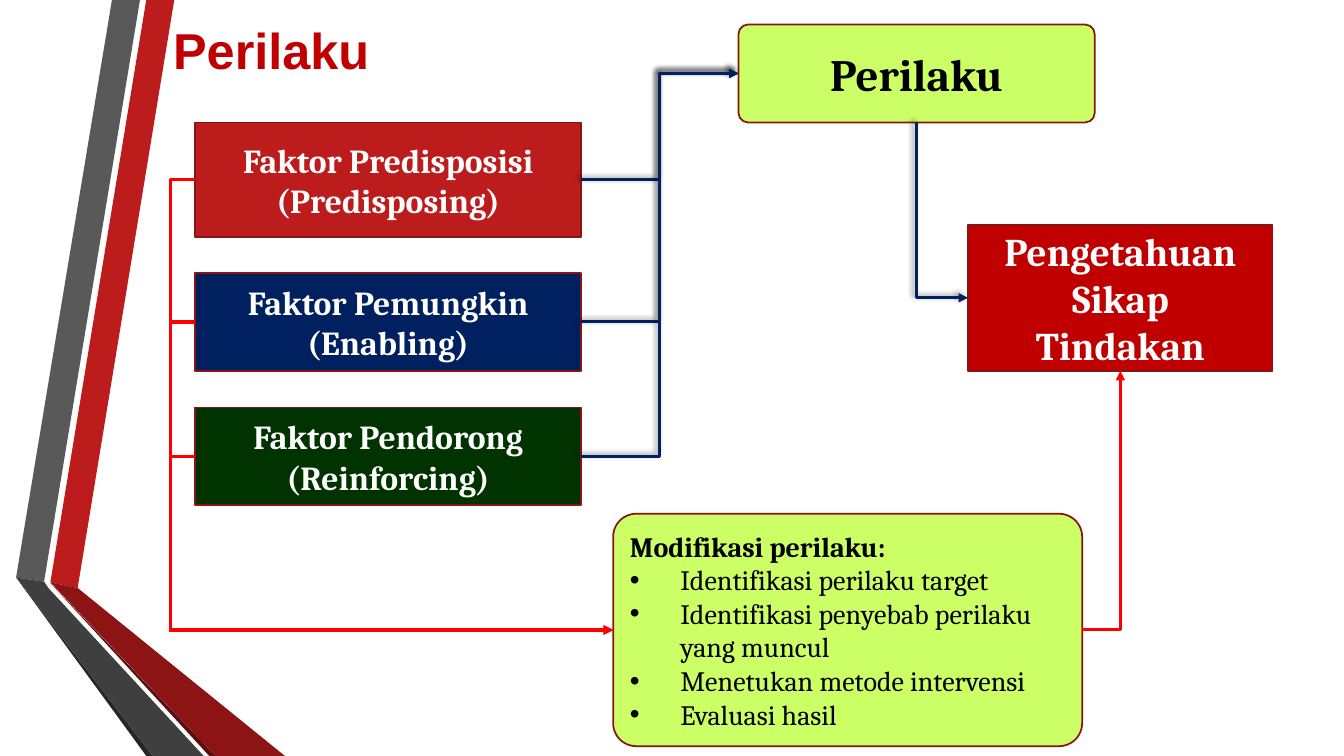
from lxml.etree import SubElement
from pptx import Presentation
from pptx.dml.color import RGBColor
from pptx.enum.shapes import MSO_CONNECTOR, MSO_SHAPE
from pptx.enum.text import MSO_ANCHOR, MSO_AUTO_SIZE, PP_ALIGN
from pptx.oxml.ns import qn
from pptx.util import Pt

RED, NAVY, LIME, EDGE = "C00000", "002060", "CCFF66", "891414"
TOP, LEFT, BOTTOM, RIGHT = range(4)
ROUNDING = 0.099


def rgb(value):
    return RGBColor.from_string(value)


def sub(parent, tag, **attrs):
    return SubElement(parent, qn(tag), {k: str(v) for k, v in attrs.items()})


def paint(sp, fill, line=None):
    sp.fill.solid()
    sp.fill.fore_color.rgb = rgb(fill)
    if line:
        sp.line.color.rgb = rgb(line)
        sp.line.width = Pt(1.25)
    else:
        sp.line.fill.background()


def place(sp, x, y, w, h):
    for name, value in dict(left=x, top=y, width=w, height=h).items():
        setattr(sp, name, Pt(value))


def style(p, color, size, bold=True, name="Cambria"):
    for key, value in dict(size=Pt(size), bold=bold, name=name).items():
        setattr(p.font, key, value)
    p.font.color.rgb = rgb(color)


def frame(sp):
    tf = sp.text_frame
    fmt = dict(word_wrap=True, auto_size=MSO_AUTO_SIZE.NONE,
               vertical_anchor=MSO_ANCHOR.MIDDLE,
               margin_left=Pt(7.2), margin_right=Pt(7.2),
               margin_top=Pt(3.6), margin_bottom=Pt(3.6))
    for key, value in fmt.items():
        setattr(tf, key, value)
    return tf


def box(s, kind, x, y, w, h, fill, lines, color, size):
    sp = s.shapes.add_shape(kind, Pt(x), Pt(y), Pt(w), Pt(h))
    sp.shadow.inherit = False
    paint(sp, fill, EDGE)
    if kind == MSO_SHAPE.ROUNDED_RECTANGLE:
        sp.adjustments[0] = ROUNDING
    tf = frame(sp)
    for i, line in enumerate(lines):
        p = tf.paragraphs[0] if i == 0 else tf.add_paragraph()
        p.text = line
        p.alignment = PP_ALIGN.CENTER
        style(p, color, size)
    return sp


def site(sp, index):
    fx, fy = [(0.5, 0), (0, 0.5), (0.5, 1), (1, 0.5)][index]
    return int(sp.left + sp.width * fx), int(sp.top + sp.height * fy)


def elbow(s, start, start_site, end, end_site, color, arrow="a:tailEnd",
          bend=None, shadow=False):
    (x1, y1), (x2, y2) = site(start, start_site), site(end, end_site)
    c = s.shapes.add_connector(MSO_CONNECTOR.ELBOW, x1, y1, x2, y2)
    c.begin_connect(start, start_site)
    c.end_connect(end, end_site)
    c.line.color.rgb = rgb(color)
    c.line.width = Pt(2.25)
    sub(c.line._get_or_add_ln(), arrow, type="triangle")
    spPr = c._element.spPr
    geom = spPr.find(qn("a:prstGeom"))
    if bend is None:
        geom.set("prst", "bentConnector2")
    else:
        guides = geom.find(qn("a:avLst"))
        if guides is None:
            guides = sub(geom, "a:avLst")
        sub(guides, "a:gd", name="adj1", fmla=f"val {round(bend * 100000)}")
    effects = sub(spPr, "a:effectLst")
    if shadow:
        shade = sub(effects, "a:outerShdw", blurRad=Pt(4), dist=Pt(3),
                    dir=225 * 60000, algn="br", rotWithShape=0)
        sub(sub(shade, "a:prstClr", val="black"), "a:alpha", val=40000)


def ribbons(s, x, y):
    bands = [
        ("BC1C1C", [(24.5, 416), (44, 420), (113, 0), (93, 0)]),
        ("595959", [(88.5, 0), (68.5, 0), (0, 412.5), (20, 415.5)]),
        ("262626", [(0, 412.5), (93, 540), (97.5, 540)]),
        ("5E0D0E", [(24.5, 416.5), (138, 540), (142.5, 540)]),
        ("8D1415", [(24.5, 416), (142.5, 540), (192, 540), (44, 420)]),
        ("3F3F3F", [(0, 412.5), (97.5, 540), (134, 540), (23, 420),
                    (20, 415.5)]),
    ]
    for fill, points in bands:
        pts = [(Pt(x + px), Pt(y + py)) for px, py in points]
        fb = s.shapes.build_freeform(*pts[0], scale=1.0)
        fb.add_line_segments(pts[1:], close=True)
        sp = fb.convert_to_shape()
        sp.shadow.inherit = False
        paint(sp, fill)


def title(s, x, y, w, h):
    sp = s.shapes.title
    place(sp, x, y, w, h)
    p = frame(sp).paragraphs[0]
    p.text = "Perilaku"
    p.alignment = PP_ALIGN.LEFT
    style(p, RED, 36, name="Arial")


def factors(s, x, y, w):
    rows = [(0, 82, "BC1C1C", "Faktor Predisposisi (Predisposing)"),
            (107.5, 70, NAVY, "Faktor Pemungkin (Enabling)"),
            (203.5, 70, "003300", "Faktor Pendorong (Reinforcing)")]
    return [box(s, MSO_SHAPE.RECTANGLE, x, y + dy, w, h, fill, [text],
                "FFFFFF", 24) for dy, h, fill, text in rows]


def modification(s, x, y, w, h):
    sp = s.placeholders[1]
    place(sp, x, y, w, h)
    geom = sub(sp._element.spPr, "a:prstGeom", prst="roundRect")
    sub(sub(geom, "a:avLst"), "a:gd", name="adj",
        fmla=f"val {round(ROUNDING * 100000)}")
    paint(sp, LIME, EDGE)
    tf = frame(sp)
    lines = ["Modifikasi perilaku:", "Identifikasi perilaku target",
             "Identifikasi penyebab perilaku yang muncul",
             "Menetukan metode intervensi", "Evaluasi hasil"]
    for i, line in enumerate(lines):
        p = tf.paragraphs[0] if i == 0 else tf.add_paragraph()
        p.text = line
        p.alignment = PP_ALIGN.LEFT
        p.space_before = Pt(0)
        pPr = p._p.get_or_add_pPr()
        indent = Pt(36) if i else 0
        pPr.set("marL", str(indent))
        pPr.set("indent", str(-indent))
        if i:
            sub(pPr, "a:buFont", typeface="Arial")
            sub(pPr, "a:buChar", char="•")
        else:
            sub(pPr, "a:buNone")
        style(p, "000000", 20, bold=i == 0)
    return sp


def diagram(s, x, y):
    causes = factors(s, x, y + 70, 275.5)
    behaviour = box(s, MSO_SHAPE.ROUNDED_RECTANGLE, x + 388, y, 254.5, 70,
                    LIME, ["Perilaku"], "000000", 32)
    outcome = box(s, MSO_SHAPE.FLOWCHART_PROCESS, x + 552, y + 143, 217.5,
                  104.5, RED, ["Pengetahuan", "Sikap", "Tindakan"],
                  "FFFFFF", 28)
    steps = modification(s, x + 298.5, y + 349.5, 335, 166)
    for cause in causes:
        elbow(s, cause, RIGHT, behaviour, LEFT, NAVY, bend=0.5, shadow=True)
    for cause in causes:
        elbow(s, cause, LEFT, steps, LEFT, "FF0000", bend=-0.06)
    elbow(s, outcome, LEFT, behaviour, BOTTOM, NAVY, "a:headEnd", shadow=True)
    elbow(s, steps, RIGHT, outcome, BOTTOM, "FF0000")


def main():
    prs = Presentation()
    prs.slide_width, prs.slide_height = Pt(960), Pt(540)
    s = prs.slides.add_slide(prs.slide_layouts[1])
    ribbons(s, 11.5, 0)
    title(s, 116.5, 11.5, 789, 47.5)
    diagram(s, 139.5, 17.5)
    prs.save("out.pptx")


if __name__ == "__main__":
    main()
